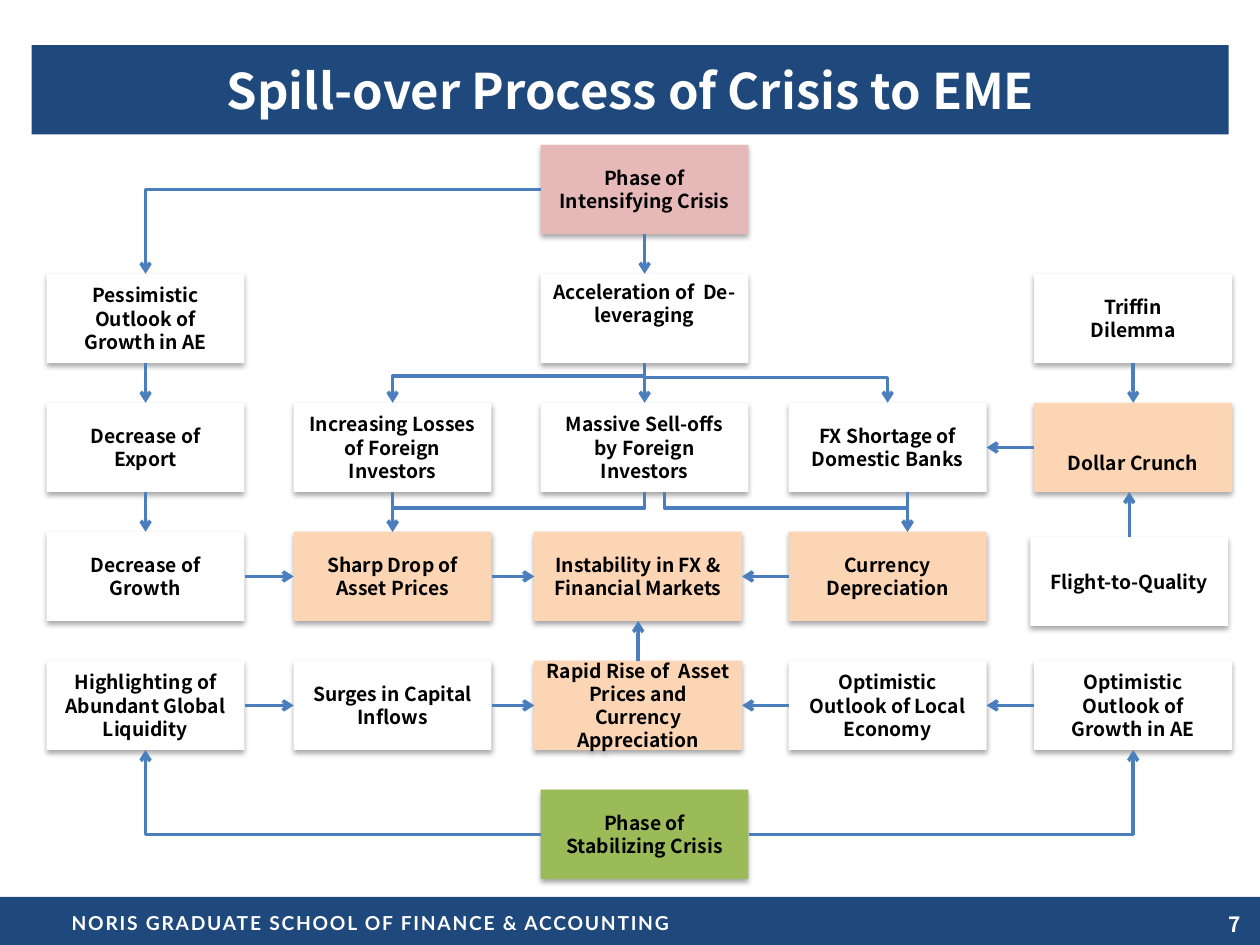
from dataclasses import dataclass
from lxml.etree import SubElement
from pptx import Presentation
from pptx.dml.color import RGBColor
from pptx.enum.shapes import MSO_CONNECTOR, MSO_SHAPE
from pptx.enum.text import MSO_ANCHOR, MSO_AUTO_SIZE, PP_ALIGN
from pptx.oxml.ns import qn
from pptx.util import Cm, Pt


@dataclass
class Theme:
    navy = RGBColor(0x1F, 0x49, 0x7D)
    line = RGBColor(0x4B, 0x7E, 0xBC)
    white = RGBColor(255, 255, 255)
    black = RGBColor(0, 0, 0)
    peach = RGBColor(0xFC, 0xD5, 0xB5)
    pink = RGBColor(0xE6, 0xB9, 0xB8)
    green = RGBColor(0x9B, 0xBB, 0x59)
    sans = "Noto Sans CJK KR"
    foot = "Lato"
    head = Pt(28)
    body = Pt(11)
    page = Pt(12)
    stroke = Pt(2)


def write(shape, text, size, color, align=PP_ALIGN.CENTER, font=Theme.sans):
    frame = shape.text_frame
    frame.text = text
    frame.word_wrap = True
    frame.auto_size = MSO_AUTO_SIZE.NONE
    frame.vertical_anchor = MSO_ANCHOR.MIDDLE
    for para in frame.paragraphs:
        para.alignment = align
        for run in para.runs:
            run.font.name = font
            run.font.size = size
            run.font.bold = True
            run.font.color.rgb = color


def arrow(kind, *ends):
    """Draw a connector from x1, y1 to x2, y2 with an open head at its end."""
    link = slide.shapes.add_connector(kind, *(int(end) for end in ends))
    link.line.color.rgb = Theme.line
    link.line.width = Theme.stroke
    SubElement(link.line._get_or_add_ln(), qn("a:tailEnd"), type="arrow")
    SubElement(link._element.spPr, qn("a:effectLst"))
    return link


deck = Presentation()
deck.slide_width, deck.slide_height = Cm(25.4), Cm(19.05)
slide = deck.slides.add_slide(deck.slide_layouts[5])

# Footer band
band = slide.shapes.add_shape(MSO_SHAPE.RECTANGLE, 0, Cm(18.08), Cm(25.4), Cm(0.97))
band.shadow.inherit = False
band.fill.solid()
band.fill.fore_color.rgb = Theme.navy
band.line.fill.background()

school = slide.shapes.add_textbox(Cm(0.64), Cm(18.23), Cm(13.67), Cm(0.73))
write(school, "NORIS GRADUATE SCHOOL OF FINANCE & ACCOUNTING",
      Theme.body, Theme.white, font=Theme.foot)
school.text_frame.paragraphs[0].runs[0].font._element.set("spc", "100")

page = slide.shapes.add_textbox(Cm(22.96), Cm(18.24), Cm(2.3), Cm(0.76))
write(page, "7", Theme.page, Theme.white, PP_ALIGN.RIGHT)

# Boxes: name, column, row, fill, text
cols = [Cm(0.94), Cm(5.92), Cm(10.9), Cm(15.9), Cm(20.85)]
top, pitch, high = Cm(2.92), Cm(2.6), Cm(1.8)
slim, wide = Cm(3.99), Cm(4.19)
inset = Cm(0.13)   # left shift of the two middle result boxes
gap = Cm(0.6)      # one line of text

cells = [
    ("crisis", 2, 0, Theme.pink, "Phase of Intensifying Crisis"),
    ("delever", 2, 1, Theme.white, "Acceleration of  De-leveraging"),
    ("gloom", 0, 1, Theme.white, "Pessimistic Outlook of Growth in AE"),
    ("export", 0, 2, Theme.white, "Decrease of Export"),
    ("growth", 0, 3, Theme.white, "Decrease of Growth"),
    ("short", 3, 2, Theme.white, "FX Shortage of Domestic Banks"),
    ("sell", 2, 2, Theme.white, "Massive Sell-offs by Foreign Investors"),
    ("loss", 1, 2, Theme.white, "Increasing Losses of Foreign Investors"),
    ("crunch", 4, 2, Theme.peach, "Dollar Crunch"),
    ("drop", 1, 3, Theme.peach, "Sharp Drop of Asset Prices"),
    ("shaky", 2, 3, Theme.peach, "Instability in FX & Financial Markets"),
    ("weak", 3, 3, Theme.peach, "Currency Depreciation"),
    ("rise", 2, 4, Theme.peach, "Rapid Rise of  Asset Prices and Currency Appreciation"),
    ("surge", 1, 4, Theme.white, "Surges in Capital Inflows"),
    ("cash", 0, 4, Theme.white, "Highlighting of Abundant Global Liquidity"),
    ("calm", 2, 5, Theme.green, "Phase of Stabilizing Crisis"),
    ("bright", 4, 4, Theme.white, "Optimistic Outlook of Growth in AE"),
    ("local", 3, 4, Theme.white, "Optimistic Outlook of Local Economy"),
    ("triffin", 4, 1, Theme.white, "Triffin\nDilemma"),
    ("flight", 4, 3, Theme.white, "Flight-to-Quality"),
]
boxes = {}
for name, col, row, fill, text in cells:
    box = slide.shapes.add_shape(MSO_SHAPE.RECTANGLE, cols[col], top + row * pitch,
                                 wide if col == 2 else slim, high)
    box.fill.solid()
    box.fill.fore_color.rgb = fill
    box.line.fill.background()
    box.shadow.inherit = False
    glow = SubElement(box._element.spPr.find(qn("a:effectLst")), qn("a:outerShdw"),
                      blurRad="40000", dist="23000", dir="5400000", rotWithShape="0")
    tint = SubElement(glow, qn("a:srgbClr"), val="000000")
    SubElement(tint, qn("a:alpha"), val="35000")
    write(box, text, Theme.body, Theme.black)
    boxes[name] = box

for name in ("shaky", "rise"):
    boxes[name].left -= inset
boxes["flight"].left -= Cm(0.08)
boxes["flight"].top += Cm(0.1)
boxes["delever"].text_frame.margin_bottom += gap
boxes["crunch"].text_frame.margin_top += gap

# Title
title = slide.shapes.title
title.left, title.top, title.width, title.height = Cm(0.64), Cm(0.91), Cm(24.13), Cm(1.8)
title.fill.solid()
title.fill.fore_color.rgb = Theme.navy
write(title, "Spill-over Process of Crisis to EME", Theme.head, Theme.white)

# Straight arrows between neighbours
across = [("growth", "drop"), ("crunch", "short"), ("drop", "shaky"), ("weak", "shaky"),
          ("cash", "surge"), ("surge", "rise"), ("local", "rise"), ("bright", "local")]
for start, end in across:
    a, b = boxes[start], boxes[end]
    y = a.top + high / 2
    if a.left < b.left:
        arrow(MSO_CONNECTOR.STRAIGHT, a.left + a.width, y, b.left, y)
    else:
        arrow(MSO_CONNECTOR.STRAIGHT, a.left, y, b.left + b.width, y)

side = Cm(0.4)     # shift of the arrows that lead to the currency box
updown = [("crisis", "delever", 0), ("gloom", "export", 0), ("export", "growth", 0),
          ("triffin", "crunch", 0), ("rise", "shaky", 0), ("delever", "sell", 0),
          ("loss", "drop", 0), ("short", "weak", side), ("flight", "crunch", 0)]
for start, end, shift in updown:
    a, b = boxes[start], boxes[end]
    x = a.left + a.width / 2 + shift
    if a.top < b.top:
        arrow(MSO_CONNECTOR.STRAIGHT, x, a.top + high, x, b.top)
    else:
        arrow(MSO_CONNECTOR.STRAIGHT, x, a.top, x, b.top + high)

# One-bend arrows from the two phases
for start, end in [("crisis", "gloom"), ("calm", "cash"), ("calm", "bright")]:
    a, b = boxes[start], boxes[end]
    x = a.left if b.left < a.left else a.left + a.width
    y = b.top if a.top < b.top else b.top + high
    link = arrow(MSO_CONNECTOR.ELBOW, x, a.top + high / 2, b.left + b.width / 2, y)
    link._element.spPr.prstGeom.set("prst", "bentConnector2")

# Two-bend arrows that leave downwards: laid flat, then turned about their centre
forks = [("delever", "short", 0, 0, 36300), ("delever", "loss", 0, 0, 32900),
         ("sell", "drop", 0, 0, 39800), ("sell", "weak", side, side, 39800)]
for start, end, out, into, bend in forks:
    a, b = boxes[start], boxes[end]
    x1, y1 = a.left + a.width / 2 + out, a.top + high
    x2, y2 = b.left + b.width / 2 + into, b.top
    midx, midy = (x1 + x2) / 2, (y1 + y2) / 2
    run, fall = abs(x2 - x1) / 2, (y2 - y1) / 2
    left = x2 < x1
    if not left:
        fall = -fall
    link = arrow(MSO_CONNECTOR.ELBOW, midx - fall, midy - run, midx + fall, midy + run)
    link._element.spPr.find(qn("a:xfrm")).set("rot", "5400000" if left else "16200000")
    guides = link._element.spPr.prstGeom.get_or_add_avLst()
    SubElement(guides, qn("a:gd"), name="adj1", fmla=f"val {bend}")

deck.save("out.pptx")
